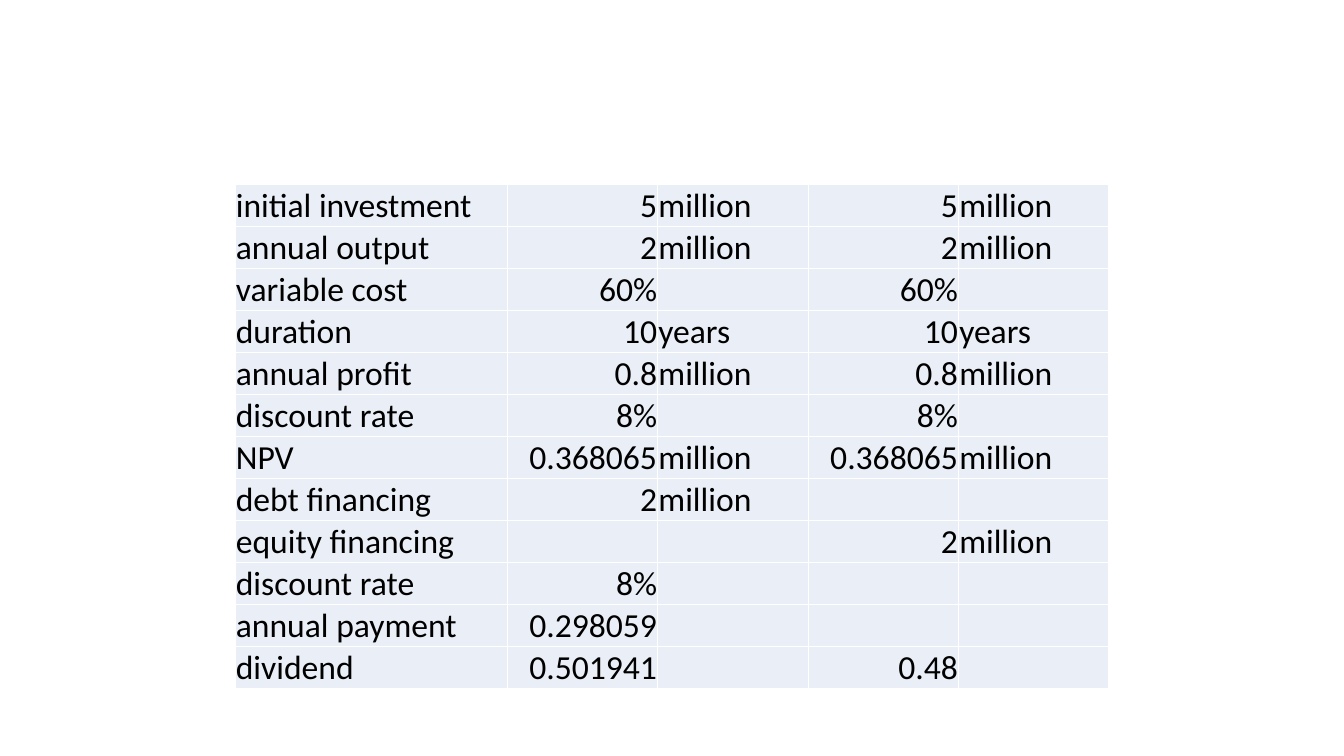
from lxml.etree import SubElement
from pptx import Presentation
from pptx.dml.color import RGBColor
from pptx.enum.text import MSO_ANCHOR, PP_ALIGN
from pptx.oxml.ns import qn
from pptx.util import Pt

BLACK = RGBColor(0x00, 0x00, 0x00)
WHITE = RGBColor(0xFF, 0xFF, 0xFF)
PALE = RGBColor(0xEA, 0xEF, 0xF7)

LEFT, TOP = Pt(168), Pt(132)
WIDTHS = [Pt(194.4)] + [Pt(107.45)] * 4
HEIGHT = Pt(30)
ALIGNS = [PP_ALIGN.LEFT, PP_ALIGN.RIGHT, PP_ALIGN.LEFT,
          PP_ALIGN.RIGHT, PP_ALIGN.LEFT]

CELL = {
    "margin_left": Pt(0.5),
    "margin_right": Pt(0.5),
    "margin_top": Pt(0.5),
    "margin_bottom": Pt(0),
    "vertical_anchor": MSO_ANCHOR.BOTTOM,
}
FONT = {"name": "Calibri", "size": Pt(24)}
PLAIN = {"first_row": False, "horz_banding": False}

ROWS = [
    ("initial investment", "5", "million", "5", "million"),
    ("annual output", "2", "million", "2", "million"),
    ("variable cost", "60%", "", "60%", ""),
    ("duration", "10", "years", "10", "years"),
    ("annual profit", "0.8", "million", "0.8", "million"),
    ("discount rate", "8%", "", "8%", ""),
    ("NPV", "0.368065", "million", "0.368065", "million"),
    ("debt financing", "2", "million", "", ""),
    ("equity financing", "", "", "2", "million"),
    ("discount rate", "8%", "", "", ""),
    ("annual payment", "0.298059", "", "", ""),
    ("dividend", "0.501941", "", "0.48", ""),
]


def apply(item, values):
    """Set each named format value on an item."""
    for name, value in values.items():
        setattr(item, name, value)


def add_edges(cell):
    """Draw a thin white line on each side of a cell."""
    props = cell._tc.get_or_add_tcPr()
    for tag in ("a:lnL", "a:lnR", "a:lnT", "a:lnB"):
        line = SubElement(props, qn(tag), w=str(Pt(1)))
        fill = SubElement(line, qn("a:solidFill"))
        SubElement(fill, qn("a:srgbClr"), val=str(WHITE))


def fill_cell(cell, text, align):
    """Format a cell and write its text."""
    apply(cell, CELL)
    add_edges(cell)
    cell.fill.solid()
    cell.fill.fore_color.rgb = PALE
    if text:
        para = cell.text_frame.paragraphs[0]
        para.alignment = align
        run = para.add_run()
        run.text = text
        apply(run.font, FONT)
        run.font.color.rgb = BLACK


def add_grid(slide):
    """Add the table of financing figures."""
    frame = slide.shapes.add_table(len(ROWS), len(WIDTHS), LEFT, TOP,
                                   sum(WIDTHS), HEIGHT * len(ROWS))
    table = frame.table
    apply(table, PLAIN)
    for column, width in zip(table.columns, WIDTHS):
        column.width = width
    for row, texts in zip(table.rows, ROWS):
        row.height = HEIGHT
        for cell, text, align in zip(row.cells, texts, ALIGNS):
            fill_cell(cell, text, align)


def main():
    """Build and save the slide."""
    deck = Presentation()
    apply(deck, {"slide_width": Pt(960), "slide_height": Pt(540)})
    slide = deck.slides.add_slide(deck.slide_layouts[6])
    add_grid(slide)
    deck.save("out.pptx")


if __name__ == "__main__":
    main()
